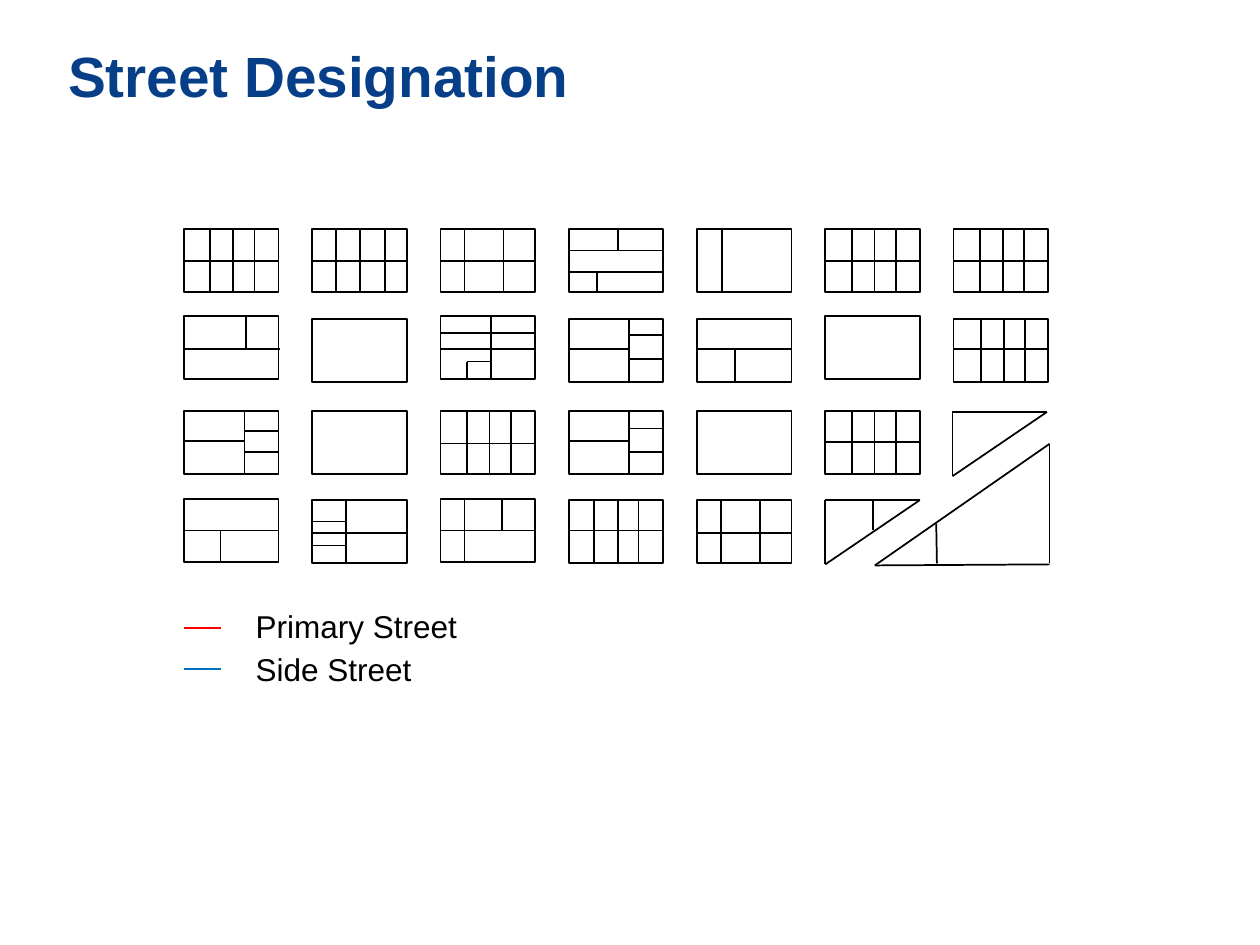
from dataclasses import dataclass
from typing import NamedTuple

from pptx import Presentation
from pptx.dml.color import RGBColor
from pptx.enum.shapes import MSO_CONNECTOR, MSO_SHAPE
from pptx.enum.text import MSO_ANCHOR, MSO_AUTO_SIZE, PP_ALIGN
from pptx.oxml.ns import qn
from pptx.slide import Slide
from pptx.text.text import TextFrame
from pptx.util import Pt
from lxml.etree import SubElement


@dataclass(frozen=True)
class Theme:
    font: str = "Arial"
    title_size: float = 32.4
    legend_size: float = 18
    line_width: float = 1
    title: RGBColor = RGBColor(0x06, 0x3F, 0x88)
    ink: RGBColor = RGBColor(0, 0, 0)
    primary: RGBColor = RGBColor(0xFF, 0, 0)
    side: RGBColor = RGBColor(0, 0x70, 0xC0)


class Line(NamedTuple):
    x1: float
    y1: float
    x2: float
    y2: float


class Block(NamedTuple):
    column: int
    top: float
    lot_lines: tuple[Line, ...] = ()


class LegendEntry(NamedTuple):
    text: str
    color: RGBColor
    line_top: float
    text_top: float


THEME = Theme()
BLOCK_WIDTH, BLOCK_HEIGHT = 54, 36
FIRST_LEFT, COLUMN_PITCH = 105.1, 73.3


def across(y: float, start: float = 0, end: float = BLOCK_WIDTH) -> Line:
    return Line(start, y, end, y)


def down(x: float, start: float = 0, end: float = BLOCK_HEIGHT) -> Line:
    return Line(x, start, x, end)


def lot_grid(middle: float, *dividers: float) -> tuple[Line, ...]:
    return (across(middle), *(down(x) for x in dividers))


def eight_lots(middle: float = 18, shift: float = 0) -> tuple[Line, ...]:
    return lot_grid(middle, *(x + shift for x in (15.1, 28.1, 40.3)))


def half_and_half(middle: float, divider: float) -> tuple[Line, ...]:
    return across(middle), down(divider, middle)


def three_on_right(upper: float, lower: float) -> tuple[Line, ...]:
    return (across(17.3, 0, 35), down(34.6),
            across(upper, 34.6), across(lower, 34.6))


BLOCKS = (
    Block(0, 131, eight_lots()),
    Block(1, 131, lot_grid(18, 13.7, 27.4, 41.8)),
    Block(2, 131, lot_grid(18, 13.7, 36)),
    Block(3, 131, (across(12.2), across(24.5), down(28, 0, 12), down(16, 24.5))),
    Block(4, 131, (down(14.4),)),
    Block(5, 131, eight_lots()),
    Block(6, 131, eight_lots()),
    Block(0, 180.7, (across(18.7, 0.7, 55), down(35.3, 0.7, 18.7))),
    Block(1, 182.2),
    Block(2, 180.7, (across(9.4), across(18.7), down(28.8, 0.7, 36.7),
                     across(25.9, 15.1, 28.8), down(15.1, 25.9))),
    Block(3, 182.2, three_on_right(9.4, 23)),
    Block(4, 182.2, half_and_half(17.3, 21.6)),
    Block(5, 180.7),
    Block(6, 182.2, eight_lots(17.3, 0.7)),
    Block(0, 234.7, three_on_right(11.5, 23.8)),
    Block(1, 234.7),
    Block(2, 234.7, eight_lots(18.7)),
    Block(3, 234.7, three_on_right(10.1, 23.8)),
    Block(4, 234.7),
    Block(5, 234.7, eight_lots()),
    Block(0, 285.1, half_and_half(18, 20.9)),
    Block(1, 285.8, (across(18.7), down(19.4),
                     across(12.2, -0.7, 19.4), across(25.9, -0.7, 19.4))),
    Block(2, 285.1, (across(18), down(13.7), down(35.3, 0, 18))),
    Block(3, 285.8, lot_grid(17.3, 14.4, 28.1, 39.9)),
    Block(4, 285.8, lot_grid(18.7, 13.7, 36)),
)
SMALL_TRIANGLES = ((471.6, 285.8), (544.3, 235.4))
TRIANGLE_SIDES = (across(0), down(0, 0, 36.7), Line(0, 36.7, BLOCK_WIDTH, 0))
CORNER_LINES = (
    Line(599.8, 253.8, 599.8, 321.5),
    Line(499.9, 323.1, 599.8, 253.6),
    Line(499.9, 323.1, 599.8, 322.5),
    Line(535.4, 322, 535, 299.2),
    Line(498.7, 303.1, 498.7, 285.1),
)
LEGEND = (
    LegendEntry("Primary Street", THEME.primary, 358.7, 343.4),
    LegendEntry("Side Street", THEME.side, 382.5, 367.9),
)


def write_text(frame: TextFrame, text: str, *, size: float, color: RGBColor,
               bold: bool = False, anchor: MSO_ANCHOR = MSO_ANCHOR.TOP) -> None:
    frame.word_wrap = True
    frame.auto_size = MSO_AUTO_SIZE.NONE
    frame.vertical_anchor = anchor
    paragraph = frame.paragraphs[0]
    paragraph.alignment = PP_ALIGN.LEFT
    run = paragraph.add_run()
    run.text = text
    run.font.name = THEME.font
    run.font.size = Pt(size)
    run.font.bold = bold
    run.font.color.rgb = color


def draw_line(slide: Slide, line: Line, left: float = 0, top: float = 0,
              color: RGBColor = THEME.ink) -> None:
    connector = slide.shapes.add_connector(
        MSO_CONNECTOR.STRAIGHT, Pt(left + line.x1), Pt(top + line.y1),
        Pt(left + line.x2), Pt(top + line.y2))
    connector.line.color.rgb = color
    connector.line.width = Pt(THEME.line_width)
    SubElement(connector._element.spPr, qn("a:effectLst"))


def draw_block(slide: Slide, block: Block) -> None:
    left = FIRST_LEFT + block.column * COLUMN_PITCH
    shape = slide.shapes.add_shape(MSO_SHAPE.RECTANGLE, Pt(left), Pt(block.top),
                                   Pt(BLOCK_WIDTH), Pt(BLOCK_HEIGHT))
    shape.shadow.inherit = False
    shape.fill.background()
    shape.line.color.rgb = THEME.ink
    shape.line.width = Pt(THEME.line_width)
    for line in block.lot_lines:
        draw_line(slide, line, left, block.top)


def draw_legend_entry(slide: Slide, entry: LegendEntry) -> None:
    draw_line(slide, across(entry.line_top, 105, 126.5), color=entry.color)
    box = slide.shapes.add_textbox(Pt(139), Pt(entry.text_top), Pt(147.6), Pt(29))
    write_text(box.text_frame, entry.text, size=THEME.legend_size, color=THEME.ink)


def main() -> None:
    presentation = Presentation()
    presentation.slide_width, presentation.slide_height = Pt(720), Pt(540)
    slide = presentation.slides.add_slide(presentation.slide_layouts[5])

    title = slide.shapes.title
    title.left, title.top, title.width, title.height = Pt(31.7), Pt(21.6), Pt(620.6), Pt(42.5)
    write_text(title.text_frame, "Street Designation", size=THEME.title_size,
               color=THEME.title, bold=True, anchor=MSO_ANCHOR.MIDDLE)

    for block in BLOCKS:
        draw_block(slide, block)
    for left, top in SMALL_TRIANGLES:
        for line in TRIANGLE_SIDES:
            draw_line(slide, line, left, top)
    for line in CORNER_LINES:
        draw_line(slide, line)
    for entry in LEGEND:
        draw_legend_entry(slide, entry)

    presentation.save("out.pptx")


if __name__ == "__main__":
    main()
